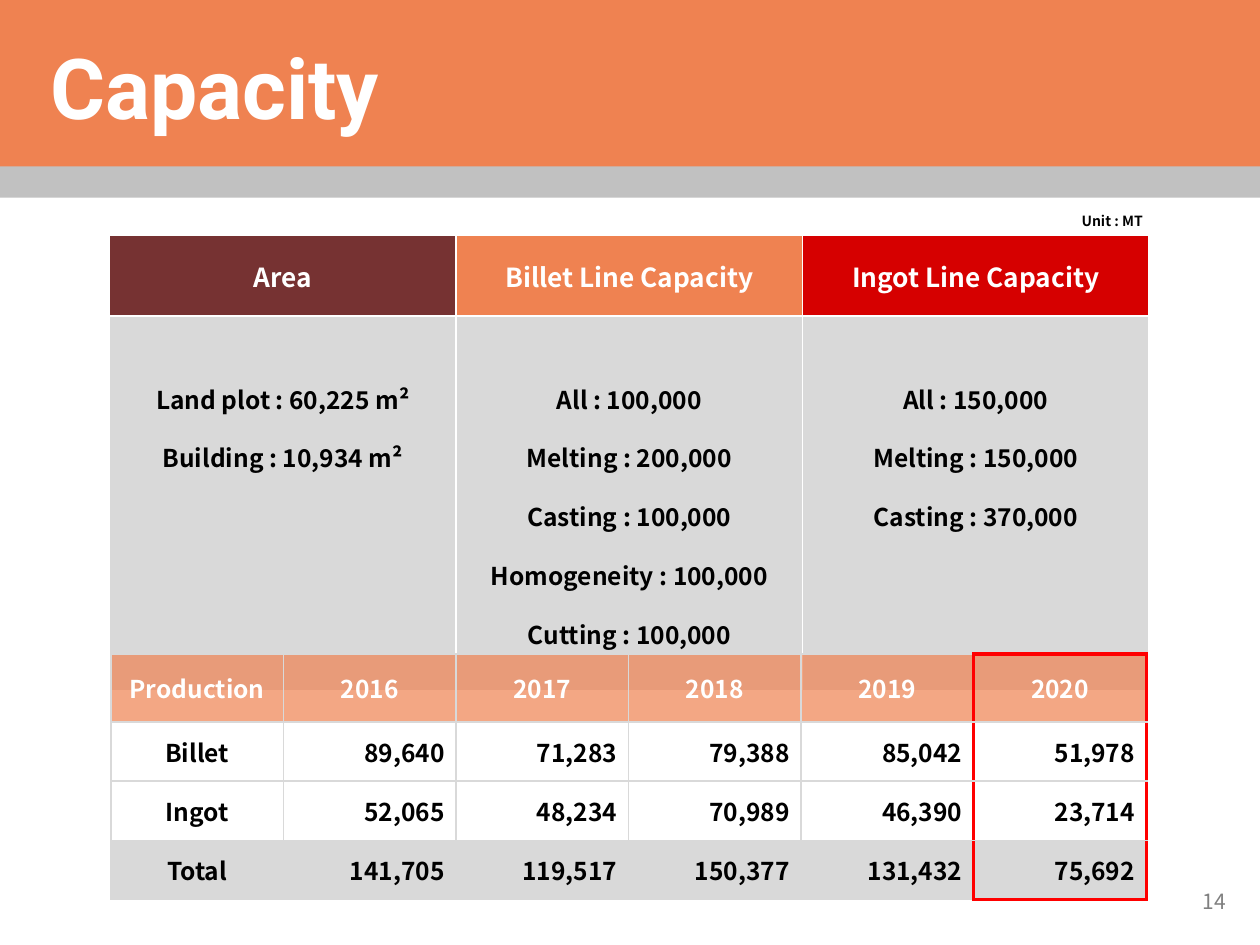
from lxml.etree import SubElement
from pptx import Presentation
from pptx.dml.color import RGBColor
from pptx.enum.shapes import MSO_SHAPE
from pptx.enum.text import MSO_ANCHOR as Anchor, PP_ALIGN as Align
from pptx.oxml.ns import qn
from pptx.util import Inches, Pt

ORANGE = RGBColor(0xEF, 0x82, 0x51)
MAROON = RGBColor(0x76, 0x32, 0x32)
CRIMSON = RGBColor(0xD6, 0x00, 0x00)
RED = RGBColor(0xFF, 0x00, 0x00)
WHITE = RGBColor(0xFF, 0xFF, 0xFF)
BLACK = RGBColor(0x00, 0x00, 0x00)
BAND_GRAY = RGBColor(0xC1, 0xC1, 0xC1)
CELL_GRAY = RGBColor(0xD9, 0xD9, 0xD9)
PAGE_GRAY = RGBColor(0x80, 0x80, 0x80)

BODY_FONT = "Noto Sans CJK KR"
TITLE_FONT = "Roboto"

CAPACITY = [
    ("Area", MAROON, ["Land plot : 60,225 m²", "Building : 10,934 m²"]),
    ("Billet Line Capacity", ORANGE,
     ["All : 100,000", "Melting : 200,000", "Casting : 100,000",
      "Homogeneity : 100,000", "Cutting : 100,000"]),
    ("Ingot Line Capacity", CRIMSON,
     ["All : 150,000", "Melting : 150,000", "Casting : 370,000"]),
]
PRODUCTION = [
    ["Production", "2016", "2017", "2018", "2019", "2020"],
    ["Billet", "89,640", "71,283", "79,388", "85,042", "51,978"],
    ["Ingot", "52,065", "48,234", "70,989", "46,390", "23,714"],
    ["Total", "141,705", "119,517", "150,377", "131,432", "75,692"],
]


def style_text(frame, size, color, bold=True, align=Align.CENTER, font=BODY_FONT):
    for paragraph in frame.paragraphs:
        paragraph.alignment = align
        for run in paragraph.runs:
            run.font.name = font
            run.font.size = Pt(size)
            run.font.bold = bold
            run.font.color.rgb = color


def add_band(slide, width, height, color):
    band = slide.shapes.add_shape(MSO_SHAPE.RECTANGLE, 0, 0, width, Inches(height))
    band.shadow.inherit = False
    band.fill.solid()
    band.fill.fore_color.rgb = color
    band.line.fill.background()


def add_label(slide, text, box, size, color, bold, anchor):
    label = slide.shapes.add_textbox(*map(Inches, box))
    frame = label.text_frame
    frame.word_wrap = True
    frame.vertical_anchor = anchor
    frame.text = text
    style_text(frame, size, color, bold, Align.RIGHT)


def add_grid(slide, left, top, col_width, col_count, row_heights):
    frame = slide.shapes.add_table(
        len(row_heights), col_count, Inches(left), Inches(top),
        Inches(col_width * col_count), Inches(sum(row_heights)))
    grid = frame.table
    grid.first_row = grid.horz_banding = False
    for column in grid.columns:
        column.width = Inches(col_width)
    for row, height in zip(grid.rows, row_heights):
        row.height = Inches(height)
    return grid


def set_margins(cell, side, top, bottom):
    cell.margin_left = cell.margin_right = Inches(side)
    cell.margin_top, cell.margin_bottom = Inches(top), Inches(bottom)


def set_borders(cell, color, red_sides=""):
    properties = cell._tc.get_or_add_tcPr()
    for side in "LRTB":
        is_red = side in red_sides
        line = SubElement(properties, qn(f"a:ln{side}"),
                          w=str(Pt(2.25 if is_red else 1)))
        paint = SubElement(line, qn("a:solidFill"))
        SubElement(paint, qn("a:srgbClr"), val=str(RED if is_red else color))


def fill_cell(cell, color, opacity=100):
    cell.fill.solid()
    cell.fill.fore_color.rgb = color
    if opacity < 100:
        shade = cell._tc.tcPr.find(qn("a:solidFill")).find(qn("a:srgbClr"))
        SubElement(shade, qn("a:alpha"), val=str(opacity * 1000))


def add_capacity_table(slide):
    grid = add_grid(slide, 0.87, 1.87, 2.75, len(CAPACITY), [0.64, 2.4])
    for col, (heading, color, lines) in enumerate(CAPACITY):
        head, body = grid.cell(0, col), grid.cell(1, col)
        for cell, fill in ((head, color), (body, CELL_GRAY)):
            set_borders(cell, WHITE)
            fill_cell(cell, fill)

        head.text = heading
        head.vertical_anchor = Anchor.MIDDLE
        set_margins(head, 0.08, 0.04, 0.04)
        style_text(head.text_frame, 15, WHITE)

        body.text = "\n".join(lines)
        set_margins(body, 0.08, 0.51, 0.31)
        style_text(body.text_frame, 14, BLACK)
        for paragraph in body.text_frame.paragraphs[1:]:
            paragraph.line_spacing = 1.5
            paragraph.space_before = Pt(3)


def add_production_table(slide):
    last_row, last_col = len(PRODUCTION) - 1, len(PRODUCTION[0]) - 1
    grid = add_grid(slide, 0.88, 5.19, 1.37, last_col + 1, [0.54] + [0.47] * last_row)
    for row, values in enumerate(PRODUCTION):
        for col, value in enumerate(values):
            cell = grid.cell(row, col)
            cell.text = value
            cell.vertical_anchor = Anchor.MIDDLE
            set_margins(cell, 0.09, 0.05, 0.05)

            # A red frame runs round the latest year
            red_sides = "R" if col == last_col - 1 else ""
            if col == last_col:
                red_sides = "LR" + {0: "T", last_row: "B"}.get(row, "")
            set_borders(cell, CELL_GRAY, red_sides)

            if row == 0:
                fill_cell(cell, ORANGE, 70)
            else:
                fill_cell(cell, CELL_GRAY if row == last_row else WHITE)
            style_text(cell.text_frame, 14, WHITE if row == 0 else BLACK,
                       align=Align.RIGHT if row and col else Align.CENTER)


def set_title(slide, text):
    title = slide.shapes.title
    title.left, title.top, title.width, title.height = map(
        Inches, (0.3, 0.32, 5.6, 0.83))
    frame = title.text_frame
    frame.text = text
    frame.vertical_anchor = Anchor.TOP
    frame.paragraphs[0].line_spacing = 0.9
    style_text(frame, 48, WHITE, align=Align.LEFT, font=TITLE_FONT)
    # Bring the title in front of the header bands
    slide.shapes._spTree.append(title._element)


def main():
    deck = Presentation()
    deck.slide_width, deck.slide_height = Inches(10), Inches(7.5)
    slide = deck.slides.add_slide(deck.slide_layouts[5])

    # Header
    add_band(slide, deck.slide_width, 1.57, BAND_GRAY)
    add_band(slide, deck.slide_width, 1.32, ORANGE)
    set_title(slide, "Capacity")

    # Tables
    add_capacity_table(slide)
    add_production_table(slide)

    # Unit and page number
    add_label(slide, "Unit : MT", (7.9, 1.64, 1.27, 0.24), 8, BLACK, True, Anchor.TOP)
    add_label(slide, "14", (9.12, 6.95, 0.71, 0.4), 12, PAGE_GRAY, False, Anchor.MIDDLE)

    deck.save("out.pptx")


if __name__ == "__main__":
    main()
